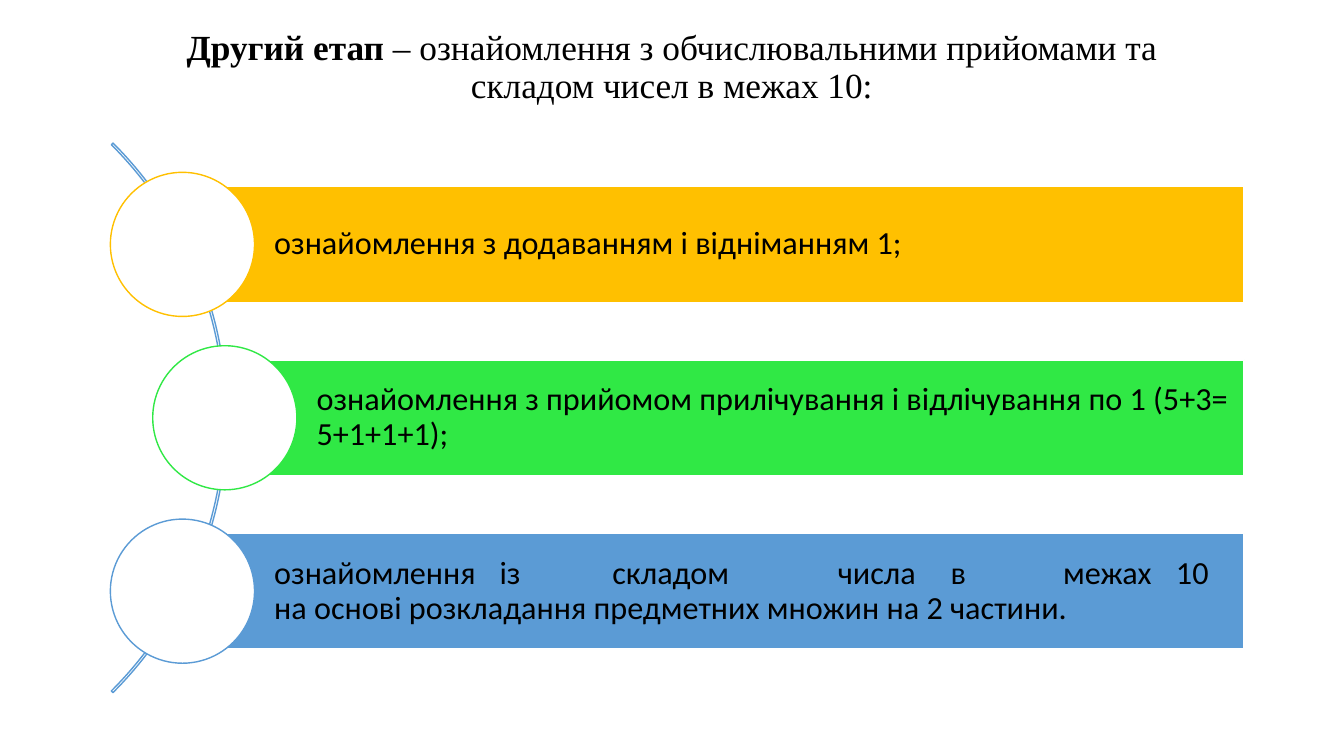
from pptx import Presentation
from pptx.dml.color import RGBColor
from pptx.enum.shapes import MSO_SHAPE as Shape
from pptx.enum.text import MSO_ANCHOR as Anchor, MSO_AUTO_SIZE as AutoSize, PP_ALIGN as Align
from pptx.oxml.ns import qn
from pptx.util import Inches, Pt
from lxml.etree import SubElement

TITLE = [
    ("Другий етап ", True),
    ("– ознайомлення з обчислювальними прийомами та складом чисел в межах 10:", False),
]
STEPS = [
    ("ознайомлення з додаванням і відніманням 1;", "FFC000", 1.81),
    ("ознайомлення з прийомом прилічування і відлічування по 1 (5+3= 5+1+1+1);", "30E845", 2.23),
    ("ознайомлення\tіз\tскладом\tчисла\tв\tмежах\t10 на основі розкладання "
     "предметних множин на 2 частини.", "5B9BD5", 1.81),
]
BAR_RIGHT, BAR_HEIGHT = 12.34, 1.15
FIRST_MIDDLE, STEP_PITCH = 2.425, 1.72
CIRCLE = 1.43
ARC_SIZE = 7.71
TAB_STEP = 1.118


def color(value):
    return RGBColor.from_string(value)


def add_shape(page, kind, left, top, width, height, fill, line):
    shape = page.shapes.add_shape(kind, Inches(left), Inches(top), Inches(width), Inches(height))
    shape.shadow.inherit = False
    if fill:
        shape.fill.solid()
        shape.fill.fore_color.rgb = color(fill)
    else:
        shape.fill.background()
    shape.line.color.rgb = color(line)
    shape.line.width = Pt(1)
    return shape


def set_font(para, name, size):
    para.line_spacing = 0.9
    para.font.name = name
    para.font.size = Pt(size)
    para.font.color.rgb = color("000000")


def add_tabs(para, count):
    tabs = SubElement(para._p.get_or_add_pPr(), qn("a:tabLst"))
    for number in range(1, count + 1):
        SubElement(tabs, qn("a:tab"), pos=str(Inches(TAB_STEP * number)), algn="l")


def add_title(page):
    title = page.shapes.title
    title.left, title.top, title.width, title.height = map(Inches, (1.37, 0.49, 10.59, 0.79))
    frame = title.text_frame
    frame.auto_size = AutoSize.NONE
    frame.word_wrap = True
    frame.vertical_anchor = Anchor.MIDDLE
    para = frame.paragraphs[0]
    para.alignment = Align.CENTER
    set_font(para, "Times New Roman", 25.2)
    for text, bold in TITLE:
        span = para.add_run()
        span.text = text
        span.font.bold = bold
    para.add_line_break()


def add_step(page, middle, text, fill, left):
    bar = add_shape(page, Shape.RECTANGLE, left, middle - BAR_HEIGHT / 2,
                    BAR_RIGHT - left, BAR_HEIGHT, fill, "FFFFFF")
    frame = bar.text_frame
    frame.word_wrap = True
    frame.vertical_anchor = Anchor.MIDDLE
    frame.margin_left = Inches(0.91)
    frame.margin_top = frame.margin_right = frame.margin_bottom = Inches(0.06)
    para = frame.paragraphs[0]
    para.text = text
    para.alignment = Align.LEFT
    if "\t" in text:
        add_tabs(para, 8)
    set_font(para, "Calibri", 23)
    add_shape(page, Shape.OVAL, left - CIRCLE / 2, middle - CIRCLE / 2,
              CIRCLE, CIRCLE, "FFFFFF", fill)


def main():
    deck = Presentation()
    deck.slide_width, deck.slide_height = Inches(13.33), Inches(7.5)
    page = deck.slides.add_slide(deck.slide_layouts[5])
    add_title(page)
    arc_top = FIRST_MIDDLE + STEP_PITCH - ARC_SIZE / 2
    arc = add_shape(page, Shape.BLOCK_ARC, -5.46, arc_top, ARC_SIZE, ARC_SIZE, None, "5B9BD5")
    for index, value in enumerate((189, 27, 0.003)):
        arc.adjustments[index] = value
    for index, step in enumerate(STEPS):
        add_step(page, FIRST_MIDDLE + index * STEP_PITCH, *step)
    deck.save("out.pptx")


if __name__ == "__main__":
    main()
